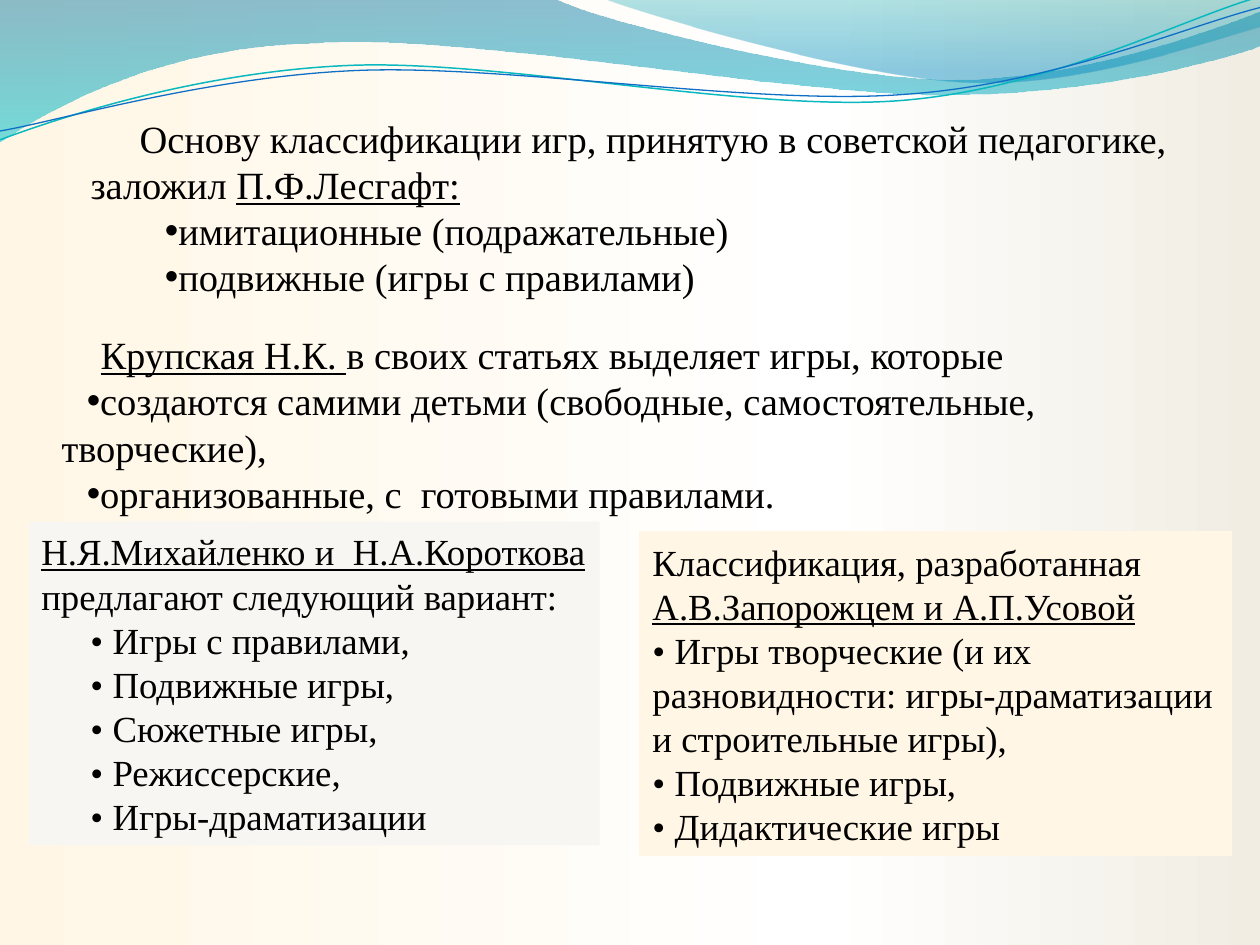
import pptx
import pptx.util
import pptx.dml.color
import pptx.enum.shapes
import pptx.enum.text
import pptx.oxml
import pptx.oxml.ns
from pptx.util import Inches

THEME = {
    "font": "Times New Roman", "bullet_font": "Arial", "text": "000000",
    "upper_size": 22, "panel_size": 21,
    "cream": "FFF6E5", "grey": "F8F6F2", "teal": "0AB8BF", "blue": "0F6FC6",
    # Gradient stops: position %, colour, opacity %
    "page": [(0, "FFF6E5", 100), (65, "FFFFFF", 100), (100, "F1EDE3", 100)],
    "wave": [(0, "0074A1", 45), (100, "00C6CF", 55)],
    "crest": [(0, "00A1A9", 30), (80, "008BBF", 45)],
}

# A two-number step is a straight line, a six-number step a cubic curve.
WAVES = [
    ("wave", (0, 0), [
        (4.4, -0.01), (4.76, 0.17, 6.64, 0.63, 7.58, 0.63),
        (8.53, 0.63, 9.58, 0.26, 10, 0.09), (10.01, 0.36),
        (9.83, 0.44, 8.7, 0.76, 7.46, 0.75), (6.22, 0.75, 3.82, 0.28, 2.57, 0.34),
        (1.29, 0.36, 0.46, 0.83, -0.01, 1.13), (0, 0)]),
    ("crest", (4.79, -0.01), [
        (5.09, 0.11, 6.82, 0.62, 7.69, 0.65), (8.56, 0.69, 9.61, 0.32, 10, 0.21),
        (10, 0), (4.79, -0.01)]),
]
STRANDS = [
    ("teal", 0.85, (0, 1.11), [
        (0.48, 0.93, 1.58, 0.57, 2.77, 0.52), (3.95, 0.47, 5.93, 0.89, 7.13, 0.8),
        (8.33, 0.71, 9.38, 0.15, 9.98, -0.02)]),
    ("blue", 0.75, (0, 1.04), [
        (0.47, 0.96, 1.64, 0.61, 2.83, 0.56), (4.03, 0.51, 5.97, 0.84, 7.17, 0.75),
        (8.36, 0.67, 9.41, 0.21, 10, 0.06)]),
]

# Paragraph: first-line indent, has bullet, runs of (text, underlined)
LESGAFT = [
    (0.39, False, [("Основу классификации игр, принятую в советской педагогике, заложил ", False),
                   ("П.Ф.Лесгафт:", True)]),
    (0.59, True, [("имитационные (подражательные)", False)]),
    (0.59, True, [("подвижные (игры с правилами)", False)]),
]
KRUPSKAYA = [
    (0.31, False, [("Крупская Н.К. ", True),
                   ("в своих статьях выделяет игры, которые", False)]),
    (0.2, True, [("создаются самими детьми (свободные, самостоятельные, творческие),", False)]),
    (0.2, True, [("организованные, с  готовыми правилами.", False)]),
]
ZAPOROZHETS = [
    (0, False, [("Классификация, разработанная ", False),
                ("А.В.Запорожцем и А.П.Усовой", True)]),
    (0, False, [("• Игры творческие (и их разновидности: игры-драматизации "
                 "и строительные игры),", False)]),
    (0, False, [("• Подвижные игры,", False)]),
    (0, False, [("• Дидактические игры", False)]),
]
MIKHAILENKO = [
    (0, False, [("Н.Я.Михайленко и  Н.А.Короткова ", True),
                ("предлагают следующий вариант:", False)]),
] + [(0.39, False, [("• " + game, False)]) for game in (
    "Игры с правилами,", "Подвижные игры,", "Сюжетные игры,",
    "Режиссерские,", "Игры-драматизации")]

UPPER_TEXTS = [((0.62, 0.86, 8.98, 1.99), LESGAFT), ((0.39, 2.58, 9.61, 1.21), KRUPSKAYA)]
PANELS = [  # box, fill, has outline, paragraphs
    ((5.08, 4.22, 4.69, 2.57), "cream", True, ZAPOROZHETS),
    ((0.23, 4.14, 4.53, 2.57), "grey", False, MIKHAILENKO),
]


def color(name):
    return pptx.dml.color.RGBColor.from_string(THEME[name])


def drawing(xml):
    """Make an element from DrawingML whose root tag is open, as in 'tag ...>'."""
    return pptx.oxml.parse_xml(f'<a:{xml[0]} {pptx.oxml.ns.nsdecls("a")} {xml[1]}')


def set_gradient(fill, owner, name, angle):
    """Fill with a themed gradient, which may have any number of translucent stops."""
    fill.solid()
    stops = "".join(
        f'<a:gs pos="{pos * 1000}"><a:srgbClr val="{rgb}">'
        f'<a:alpha val="{opacity * 1000}"/></a:srgbClr></a:gs>'
        for pos, rgb, opacity in THEME[name])
    gradient = drawing(("gradFill", f'rotWithShape="1"><a:gsLst>{stops}</a:gsLst>'
                        f'<a:lin ang="{angle * 60000}" scaled="0"/></a:gradFill>'))
    solid = owner.find(".//" + pptx.oxml.ns.qn("a:solidFill"))
    solid.getparent().replace(solid, gradient)


def add_outline(slide, start, steps, close):
    """Build a freeform on all points, then join each curve's three points into a cubic."""
    points = [(Inches(step[i]), Inches(step[i + 1]))
              for step in steps for i in range(0, len(step), 2)]
    builder = slide.shapes.build_freeform(*map(Inches, start), scale=1.0)
    builder.add_line_segments(points, close=close)
    outline = builder.convert_to_shape()
    outline.shadow.inherit = False

    segments = iter(list(outline.element.iter(pptx.oxml.ns.qn("a:lnTo"))))
    for step in steps:
        lines = [next(segments) for _ in range(len(step) // 2)]
        if len(lines) == 3:
            curve = drawing(("cubicBezTo", "/>"))
            lines[0].addprevious(curve)
            for line in lines:
                curve.append(line[0])
                line.getparent().remove(line)
    return outline


def write(frame, paragraphs, size):
    frame.word_wrap = True
    for number, (indent, bullet, runs) in enumerate(paragraphs):
        paragraph = frame.add_paragraph() if number else frame.paragraphs[0]
        paragraph.alignment = pptx.enum.text.PP_ALIGN.LEFT
        properties = paragraph._p.get_or_add_pPr()
        properties.set("marL", "0")
        properties.set("indent", str(Inches(indent)))
        if bullet:
            properties.append(drawing(("buFont", f'typeface="{THEME["bullet_font"]}"/>')))
            properties.append(drawing(("buChar", 'char="•"/>')))
        for text, underlined in runs:
            run = paragraph.add_run()
            run.text = text
            run.font.name = THEME["font"]
            run.font.size = pptx.util.Pt(THEME[size])
            run.font.color.rgb = color("text")
            run.font.underline = underlined


def main():
    deck = pptx.Presentation()
    deck.slide_width, deck.slide_height = Inches(10), Inches(7.5)
    slide = deck.slides.add_slide(deck.slide_layouts[6])
    set_gradient(slide.background.fill, slide.element, "page", 0)

    for name, start, steps in WAVES:
        wave = add_outline(slide, start, steps, close=True)
        set_gradient(wave.fill, wave.element, name, 90)
        wave.line.fill.background()
    for name, width, start, steps in STRANDS:
        strand = add_outline(slide, start, steps, close=False)
        strand.fill.background()
        strand.line.color.rgb = color(name)
        strand.line.width = pptx.util.Pt(width)

    for box, paragraphs in UPPER_TEXTS:
        upper = slide.shapes.add_textbox(*map(Inches, box))
        write(upper.text_frame, paragraphs, "upper_size")
    for box, fill, outlined, paragraphs in PANELS:
        panel = slide.shapes.add_shape(
            pptx.enum.shapes.MSO_SHAPE.RECTANGLE, *map(Inches, box))
        panel.shadow.inherit = False
        panel.fill.solid()
        panel.fill.fore_color.rgb = color(fill)
        if outlined:
            panel.line.color.rgb = color(fill)
            panel.line.width = pptx.util.Pt(0.75)
        else:
            panel.line.fill.background()
        panel.text_frame.vertical_anchor = pptx.enum.text.MSO_ANCHOR.MIDDLE
        write(panel.text_frame, paragraphs, "panel_size")

    deck.save("out.pptx")


if __name__ == "__main__":
    main()
